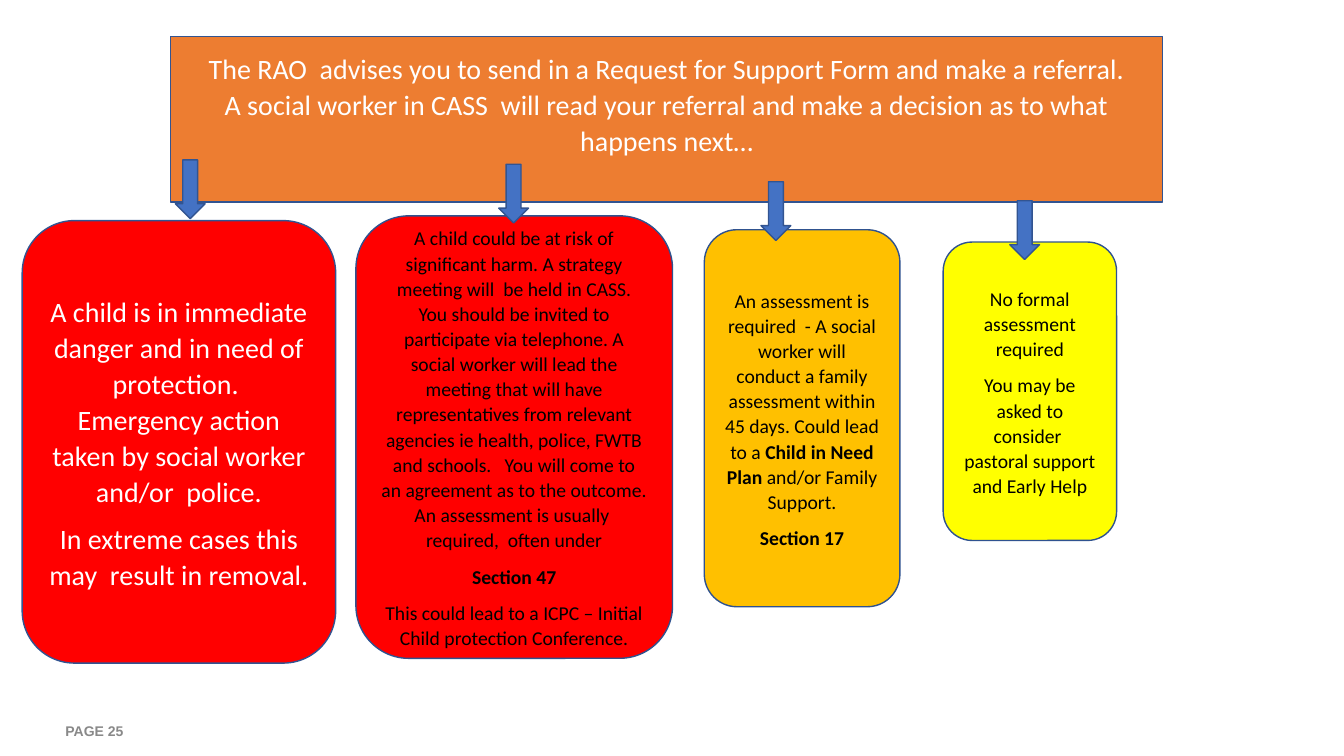
from pptx import Presentation
from pptx.dml.color import RGBColor
from pptx.enum import shapes, text
from pptx.util import Cm, Pt

WHITE = RGBColor(0xFF, 0xFF, 0xFF)
BLACK = RGBColor(0x00, 0x00, 0x00)
GREY = RGBColor(0x89, 0x89, 0x89)
ORANGE = RGBColor(0xED, 0x7D, 0x31)
RED = RGBColor(0xFF, 0x00, 0x00)
AMBER = RGBColor(0xFF, 0xC0, 0x00)
YELLOW = RGBColor(0xFF, 0xFF, 0x00)
BLUE = RGBColor(0x44, 0x72, 0xC4)
NAVY = RGBColor(0x32, 0x54, 0x91)
DEEP = RGBColor(0x2F, 0x52, 0x8F)

KIND = shapes.MSO_SHAPE
BREAK = ("\n", False)

deck = Presentation()
deck.slide_width, deck.slide_height = Cm(33.87), Cm(19.05)
slide = deck.slides.add_slide(deck.slide_layouts[6])


def add_box(kind, place, fill, edge):
    box = slide.shapes.add_shape(kind, *[Cm(v) for v in place])
    box.shadow.inherit = False
    box.fill.solid()
    box.fill.fore_color.rgb = fill
    box.line.color.rgb = edge
    box.line.width = Pt(1)
    return box


def write(box, paras, size, color):
    """Each paragraph is a list of (words, bold) runs, or BREAK."""
    frame = box.text_frame
    frame.word_wrap = True
    frame.vertical_anchor = text.MSO_ANCHOR.MIDDLE
    for i, runs in enumerate(paras):
        para = frame.add_paragraph() if i else frame.paragraphs[0]
        para.alignment = text.PP_ALIGN.CENTER
        para.line_spacing = 1.07
        para.space_after = Pt(8)
        for part in runs:
            if part == BREAK:
                para.add_line_break()
                continue
            run = para.add_run()
            run.text, run.font.bold = part
            run.font.name = "Calibri"
            run.font.size = Pt(size)
            run.font.color.rgb = color


# Page number
page = slide.shapes.add_textbox(Cm(1.4), Cm(17.91), Cm(7.9), Cm(1.02))
page.text_frame.word_wrap = True
page.text_frame.vertical_anchor = text.MSO_ANCHOR.MIDDLE
run = page.text_frame.paragraphs[0].add_run()
run.text = "PAGE 25"
run.font.name = "Arial"
run.font.size = Pt(10)
run.font.bold = True
run.font.color.rgb = GREY

# Heading banner, with room for the arrows below its text
head = add_box(KIND.RECTANGLE, (4.3, 0.92, 25, 4.17), ORANGE, NAVY)
head.text_frame.margin_bottom = Cm(0.95)
write(head, [[
    ("The RAO  advises you to send in a Request for Support Form and make a "
     "referral.", False),
    BREAK,
    ("A social worker in CASS  will read your referral and make a "
     "decision as to what happens next…", False)]], 20, WHITE)
head.text_frame.paragraphs[0].space_after = Pt(0)

# Outcomes: place, fill, edge, size, text colour, paragraphs
cards = [
    ((23.77, 6.1, 4.37, 7.52), YELLOW, DEEP, 14, BLACK, [
        [("No formal assessment required", False)],
        [("You may be asked to consider  pastoral support and Early Help",
          False)]]),
    ((17.75, 5.79, 4.93, 9.5), AMBER, DEEP, 14, BLACK, [
        [("An assessment is required  - A social worker will conduct a family "
          "assessment within 45 days. Could lead to a ", False),
         ("Child in Need Plan", True),
         (" and/or Family Support.", False)],
        [("Section 17", True)]]),
    ((8.97, 5.44, 7.98, 11.15), RED, DEEP, 14, BLACK, [
        [("A child could be at risk of significant harm. A strategy meeting "
          "will  be held in CASS. You should be invited to participate via "
          "telephone. A social worker will lead the meeting that will have "
          "representatives from relevant agencies ie health, police, FWTB "
          "and schools.   You will come to an agreement as to the outcome. "
          "An assessment is usually  required,  often under", False)],
        [("Section 47", True)],
        [("This could lead to a ICPC – Initial Child protection Conference.",
          False)]]),
    ((0.56, 5.56, 7.9, 11.15), RED, NAVY, 20, WHITE, [
        [("A child is in immediate danger and in need of protection.  "
          "Emergency action taken by social worker and/or  police.", False)],
        [("In extreme cases this may  result in removal.", False)]]),
]
for place, fill, edge, size, color, paras in cards:
    write(add_box(KIND.ROUNDED_RECTANGLE, place, fill, edge),
          paras, size, color)

# Arrows from the banner to the outcomes
for left, top in [(4.42, 4.03), (12.57, 4.14), (19.18, 4.58), (25.45, 5.06)]:
    add_box(KIND.DOWN_ARROW, (left, top, 0.75, 1.48), BLUE, NAVY)

deck.save("out.pptx")
